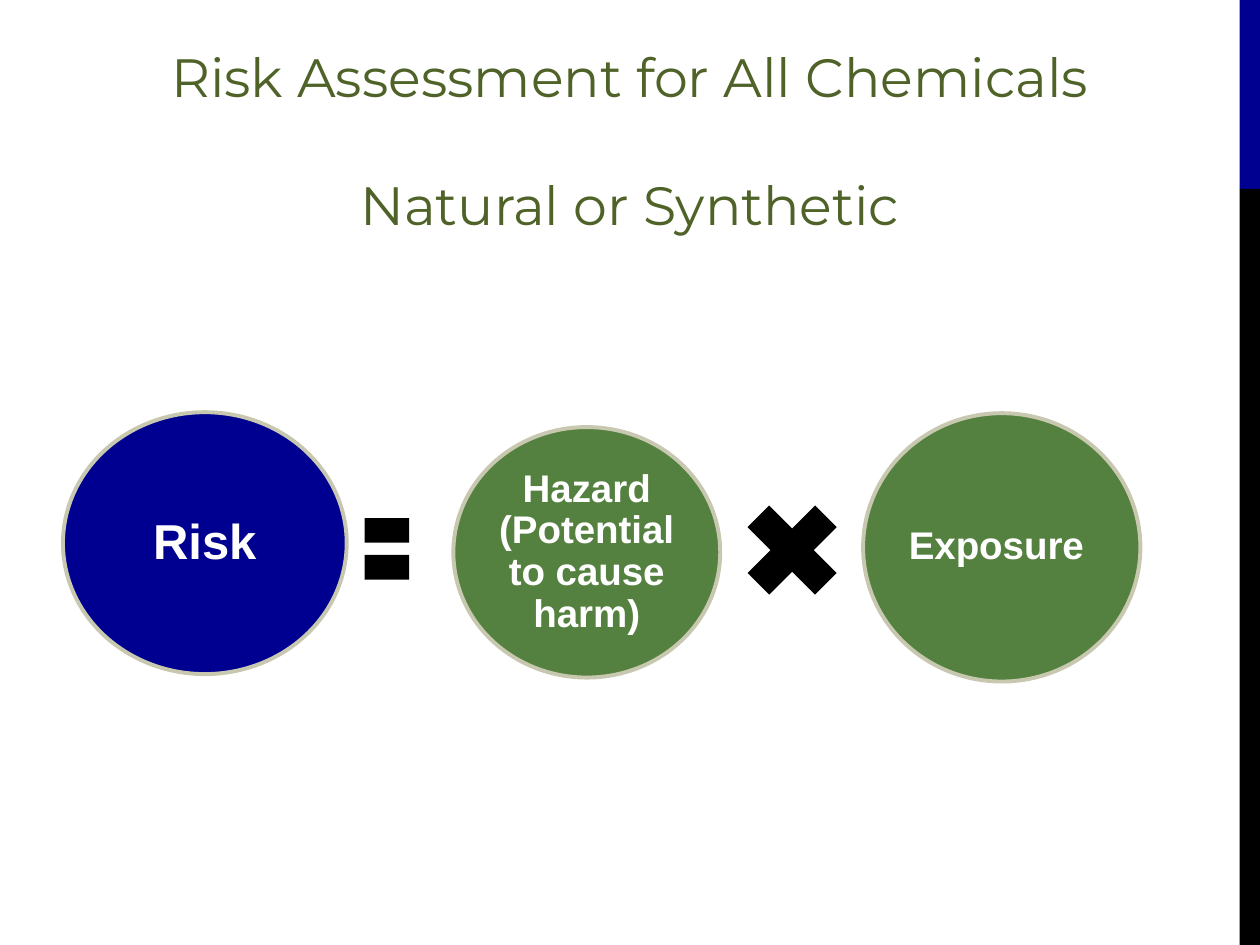
from collections import namedtuple
from dataclasses import dataclass

from pptx import Presentation
from pptx.dml.color import RGBColor
from pptx.enum.shapes import MSO_SHAPE as Preset
from pptx.enum.text import MSO_ANCHOR as Anchor, PP_ALIGN as Align
from pptx.util import Cm, Pt

Box = namedtuple("Box", "left top width height")


@dataclass(frozen=True)
class Theme:
    navy: str = "000090"
    black: str = "000000"
    green: str = "558140"
    olive: str = "4F6228"
    outline: str = "C8C8B1"
    white: str = "FFFFFF"
    title_font: str = "Montserrat"
    label_font: str = "Arial"
    title_size: float = 30.8
    title_gap: float = 36
    result_size: float = 28
    factor_size: float = 22
    outline_width: float = 2.25


THEME = Theme()


def lengths(box):
    return [Cm(value) for value in box]


def inside(region, left, top, width, height):
    return Box(region.left + left, region.top + top, width, height)


def add_preset(page, preset, box, fill):
    shape = page.shapes.add_shape(preset, *lengths(box))
    shape.shadow.inherit = False
    shape.fill.solid()
    shape.fill.fore_color.rgb = RGBColor.from_string(fill)
    shape.line.fill.background()
    return shape


def add_span(para, text, font, size, colour, bold=False):
    span = para.add_run()
    span.text = text
    span.font.name = font
    span.font.size = Pt(size)
    span.font.bold = bold
    span.font.color.rgb = RGBColor.from_string(colour)


def add_circle(page, box, text, fill, size):
    circle = add_preset(page, Preset.OVAL, box, fill)
    circle.line.color.rgb = RGBColor.from_string(THEME.outline)
    circle.line.width = Pt(THEME.outline_width)
    frame = circle.text_frame
    frame.word_wrap = True
    frame.vertical_anchor = Anchor.MIDDLE
    frame.margin_left = frame.margin_right = Cm(0.08)
    frame.margin_top = frame.margin_bottom = Cm(0.08)
    para = frame.paragraphs[0]
    para.alignment = Align.CENTER
    para.line_spacing = 0.9
    add_span(para, text, THEME.label_font, size, THEME.white, bold=True)


def add_sidebar(page, box):
    accent_height = box.height / 5
    accent = inside(box, 0, 0, box.width, accent_height)
    rest = inside(box, 0, accent_height, box.width, box.height - accent_height)
    add_preset(page, Preset.RECTANGLE, accent, THEME.navy)
    add_preset(page, Preset.RECTANGLE, rest, THEME.black)


def add_title(page, box, lines):
    frame = page.shapes.add_textbox(*lengths(box)).text_frame
    frame.word_wrap = True
    frame.vertical_anchor = Anchor.MIDDLE
    for index, line in enumerate(lines):
        para = frame.add_paragraph() if index else frame.paragraphs[0]
        para.alignment = Align.CENTER
        if index:
            para.space_before = Pt(THEME.title_gap)
        add_span(para, line, THEME.title_font, THEME.title_size, THEME.olive)


def add_equation(page, box):
    circles = [
        ("Risk", THEME.navy, THEME.result_size, (0, 0, 5.72, 5.28)),
        ("Hazard (Potential to cause harm)", THEME.green, THEME.factor_size,
         (7.87, 0.3, 5.38, 5.05)),
        ("Exposure ", THEME.green, THEME.factor_size, (16.13, 0.02, 5.59, 5.41)),
    ]
    operators = [
        (Preset.MATH_EQUAL, (5.92, 1.7, 1.22, 2.11)),
        (Preset.MATH_MULTIPLY, (13.39, 1.47, 2.62, 2.62)),
    ]
    for text, fill, size, place in circles:
        add_circle(page, inside(box, *place), text, fill, size)
    for preset, place in operators:
        add_preset(page, preset, inside(box, *place), THEME.black)


def main():
    deck = Presentation()
    deck.slide_width, deck.slide_height = Cm(25.4), Cm(19.05)
    page = deck.slides.add_slide(deck.slide_layouts[6])
    add_sidebar(page, Box(24.99, 0, 0.41, 19.05))
    add_equation(page, Box(1.27, 8.31, 21.72, 5.43))
    add_title(page, Box(1.27, 0.76, 22.86, 4.11),
              ["Risk Assessment for All Chemicals", "Natural or Synthetic"])
    deck.save("out.pptx")


if __name__ == "__main__":
    main()
